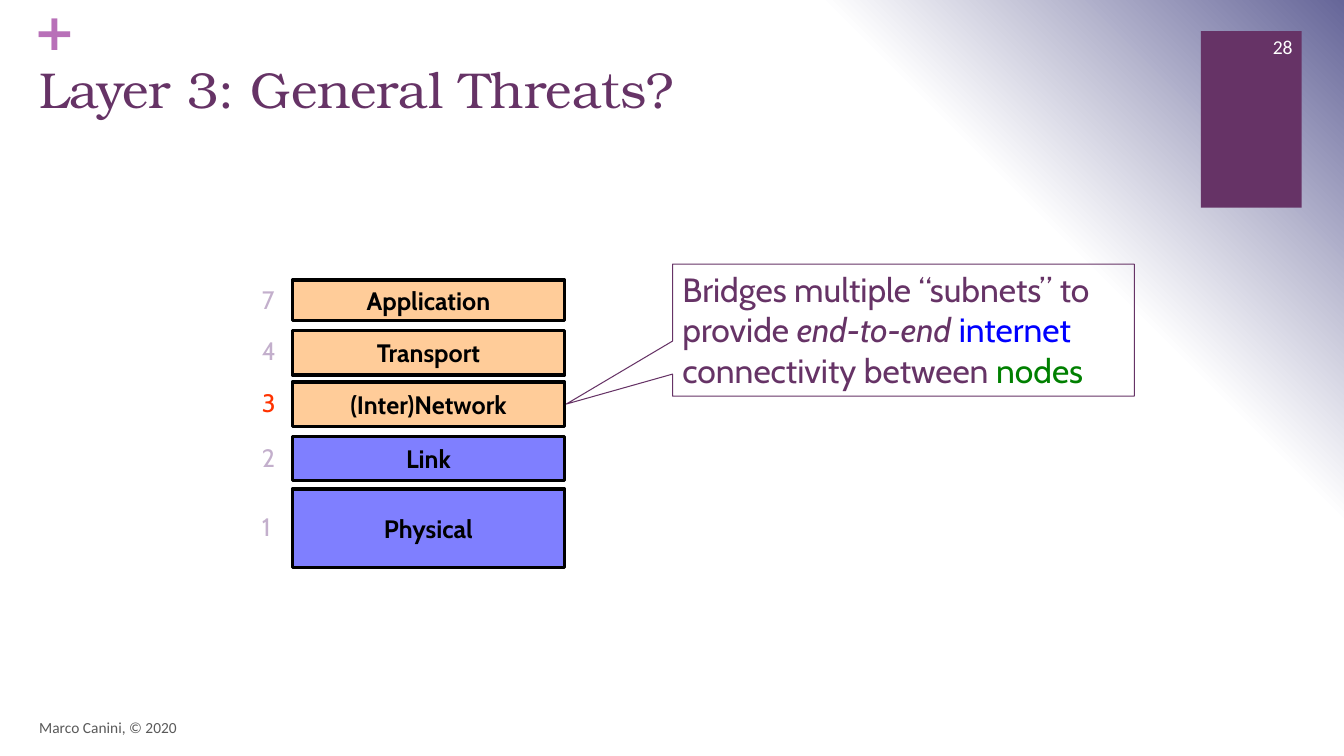
from lxml.etree import SubElement
from pptx import Presentation
from pptx.dml.color import RGBColor
from pptx.enum.shapes import MSO_SHAPE
from pptx.enum.text import MSO_ANCHOR, MSO_AUTO_SIZE, PP_ALIGN
from pptx.oxml import parse_xml
from pptx.oxml.ns import nsdecls, qn
from pptx.util import Inches, Pt

CELL = Inches(0.1)
COLS, ROWS = 133.3, 75

PLUM = RGBColor(0x66, 0x33, 0x66)
ORCHID = RGBColor(0xB8, 0x70, 0xB8)
PEACH = RGBColor(0xFF, 0xCC, 0x99)
BLUE = RGBColor(0x00, 0x00, 0xFF)
GREEN = RGBColor(0x00, 0x80, 0x00)
RED = RGBColor(0xFF, 0x33, 0x00)
LILAC = RGBColor(0xC3, 0xAF, 0xCC)
GREY = RGBColor(0x59, 0x59, 0x59)
BLACK = RGBColor(0x00, 0x00, 0x00)
WHITE = RGBColor(0xFF, 0xFF, 0xFF)

STACK_LEFT, STACK_WIDTH = 29, 27
DIGIT_LEFT, DIGIT_WIDTH, DIGIT_HIGH = 25, 2.5, 4
LAYERS = [
    ("7", "Application", 27.8, 4, 27.7, PEACH, LILAC),
    ("4", "Transport", 32.8, 4.4, 32.8, PEACH, LILAC),
    ("3", "(Inter)Network", 37.9, 4.4, 37.9, PEACH, RED),
    ("2", "Link", 43.3, 4.4, 43.4, BLUE, LILAC),
    ("1", "Physical", 48.5, 7.8, 50.2, BLUE, LILAC),
]
CLAIM = [
    ("Bridges multiple “subnets” to provide ", PLUM, False),
    ("end-to-end ", PLUM, True),
    ("internet", BLUE, False),
    (" connectivity between ", PLUM, False),
    ("nodes", GREEN, False),
]


def grid(*cells):
    return [int(cell * CELL) for cell in cells]


def style(run, size, face, color, bold=False, italic=False):
    font = run.font
    font.size, font.name = Pt(size), face
    font.bold, font.italic = bold, italic
    font.color.rgb = color


def write(shape, text, size, face, color, align=PP_ALIGN.LEFT,
          anchor=MSO_ANCHOR.TOP, bold=False):
    frame = shape.text_frame
    frame.text = text
    frame.word_wrap = True
    frame.auto_size = MSO_AUTO_SIZE.NONE
    frame.vertical_anchor = anchor
    line = frame.paragraphs[0]
    line.alignment = align
    style(line.runs[0], size, face, color, bold)
    return frame


def label(slide, cells, *args, **extra):
    return write(slide.shapes.add_textbox(*grid(*cells)), *args, **extra)


def block(slide, kind, cells, fill=None, edge=None, width=0):
    shape = slide.shapes.add_shape(kind, *grid(*cells))
    shape.shadow.inherit = False
    if fill is None:
        shape.fill.background()
    else:
        shape.fill.solid()
        shape.fill.fore_color.rgb = fill
    if edge is None:
        shape.line.fill.background()
    else:
        shape.line.color.rgb = edge
        shape.line.width = Pt(width)
    return shape


def fade(shape, percent):
    color = shape.element.find(".//" + qn("a:srgbClr"))
    SubElement(color, qn("a:alpha")).set("val", str(percent * 1000))


def backdrop(slide):
    stops = "".join(
        f'<a:gs pos="{pos * 1000}"><a:srgbClr val="{color}"/></a:gs>'
        for pos, color in [(0, "FFFFFF"), (75, "FFFFFF"), (100, "666699")])
    slide.element.find(qn("p:cSld")).insert(0, parse_xml(
        f'<p:bg {nsdecls("p", "a")}><p:bgPr><a:gradFill rotWithShape="0">'
        f'<a:gsLst>{stops}</a:gsLst><a:path path="circle">'
        '<a:fillToRect t="100000" r="100000"/></a:path></a:gradFill>'
        '<a:effectLst/></p:bgPr></p:bg>'))


def heading(slide, text):
    title = slide.shapes.title
    title.left, title.top, title.width, title.height = grid(2.9, 5.3, 114.5, 12.2)
    write(title, text, 36, "TeX Gyre Bonum", PLUM)


def layer(slide, digit, name, top, high, mark, fill, ink):
    box = block(slide, MSO_SHAPE.RECTANGLE,
                (STACK_LEFT, top, STACK_WIDTH, high), fill, BLACK, 2.5)
    if fill == BLUE:
        fade(box, 50)
    write(box, name, 18, "Cabin", BLACK, PP_ALIGN.CENTER, MSO_ANCHOR.MIDDLE, True)
    label(slide, (DIGIT_LEFT, mark, DIGIT_WIDTH, DIGIT_HIGH),
          digit, 18, "Cabin", ink)


def callout(slide):
    shape = block(slide, MSO_SHAPE.RECTANGULAR_CALLOUT,
                  (66.7, 26.2, 45.8, 13.1), None, PLUM, 0.75)
    shape.adjustments[0] = -0.73
    shape.adjustments[1] = 0.56
    frame = shape.text_frame
    frame.word_wrap = True
    frame.vertical_anchor = MSO_ANCHOR.TOP
    line = frame.paragraphs[0]
    line.alignment = PP_ALIGN.LEFT
    for text, color, italic in CLAIM:
        run = line.add_run()
        run.text = text
        style(run, 24, "Cabin", color, italic=italic)


def main():
    deck = Presentation()
    deck.slide_width, deck.slide_height = grid(COLS, ROWS)
    slide = deck.slides.add_slide(deck.slide_layouts[5])
    backdrop(slide)
    block(slide, MSO_SHAPE.RECTANGLE, (119.1, 3.1, 10, 17.5), PLUM)
    plus = label(slide, (3.3, 0, 3.8, 6.1), "+", 36, "DejaVu Sans", ORCHID, bold=True)
    plus.margin_left = plus.margin_right = 0
    plus.margin_top = plus.margin_bottom = 0
    heading(slide, "Layer 3: General Threats?")
    for row in LAYERS:
        layer(slide, *row)
    callout(slide)
    label(slide, (2.9, 70.2, 89.3, 4), "Marco Canini, © 2020", 11, "Calibri",
          GREY, anchor=MSO_ANCHOR.MIDDLE)
    label(slide, (121.1, 2.6, 8.1, 4), "28", 14, "Calibri", WHITE,
          PP_ALIGN.RIGHT, MSO_ANCHOR.MIDDLE)
    deck.save("out.pptx")


if __name__ == "__main__":
    main()
